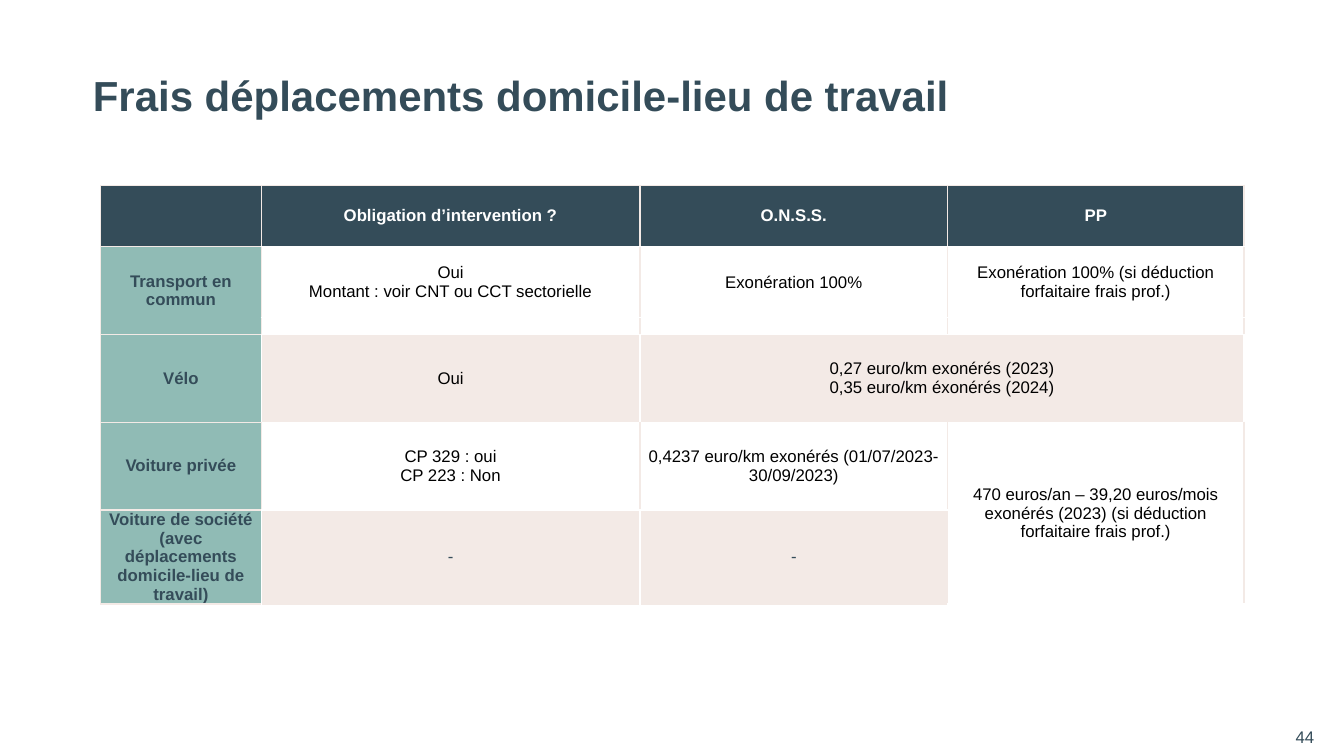
from dataclasses import dataclass

from lxml.etree import SubElement
from pptx import Presentation
from pptx.dml.color import RGBColor
from pptx.enum.text import MSO_ANCHOR, MSO_AUTO_SIZE, PP_ALIGN
from pptx.oxml.ns import qn
from pptx.util import Cm, Pt


@dataclass(frozen=True)
class Theme:
    font: str = "Arial"
    navy: str = "344C59"
    teal: str = "90BBB5"
    tint: str = "F3EAE6"
    white: str = "FFFFFF"
    black: str = "000000"
    title_size: int = 30
    text_size: int = 12
    spacer_size: int = 8
    border_width: int = 1


THEME = Theme()

COLUMN_WIDTHS = (4.04, 9.55, 7.75, 7.47)
ROW_HEIGHTS = (1.55, 1.78, 0.43, 2.21, 2.21, 2.36)
ROWS = (
    ("", "Obligation d’intervention ?", "O.N.S.S.", "PP"),
    ("Transport en commun", "Oui\nMontant : voir CNT ou CCT sectorielle",
     "Exonération 100%", "Exonération 100% (si déduction forfaitaire frais prof.)"),
    ("", "", "", ""),
    ("Vélo", "Oui", "0,27 euro/km exonérés (2023)\n0,35 euro/km éxonérés (2024)", ""),
    ("Voiture privée", "CP 329 : oui\nCP 223 : Non",
     "0,4237 euro/km exonérés (01/07/2023-30/09/2023)",
     "470 euros/an – 39,20 euros/mois exonérés (2023) (si déduction forfaitaire frais prof.)"),
    ("Voiture de société (avec déplacements domicile-lieu de travail)", "-", "-", ""),
)
MERGES = (((1, 0), (2, 0)), ((3, 2), (3, 3)), ((4, 3), (5, 3)))
TINTED_ROWS = (3, 5)
LAST_ROW = len(ROWS) - 1


def write_text(frame, text, size=THEME.text_size, color=THEME.black, bold=False,
               align=PP_ALIGN.LEFT, line_spacing=None):
    """Fill a text frame, one paragraph for each line of text."""
    frame.text = text
    for paragraph in frame.paragraphs:
        paragraph.alignment = align
        paragraph.line_spacing = line_spacing
        for run in paragraph.runs:
            run.font.name = THEME.font
            run.font.size = Pt(size)
            run.font.bold = bold
            run.font.color.rgb = RGBColor.from_string(color)


def prepare_frame(frame):
    """Wrap and centre vertically, without margins or automatic sizing."""
    frame.word_wrap = True
    frame.auto_size = MSO_AUTO_SIZE.NONE
    frame.vertical_anchor = MSO_ANCHOR.MIDDLE
    frame.margin_left = frame.margin_right = frame.margin_top = frame.margin_bottom = 0


def add_title(slide, text):
    title = slide.shapes.title
    title.left, title.top, title.width, title.height = Cm(2.34), Cm(1.02), Cm(23.75), Cm(2.92)
    prepare_frame(title.text_frame)
    write_text(title.text_frame, text, size=THEME.title_size, color=THEME.navy,
               bold=True, line_spacing=0.9)


def add_page_number(slide, text):
    box = slide.shapes.add_textbox(Cm(31.04), Cm(18.31), Cm(2.08), Cm(0.51))
    prepare_frame(box.text_frame)
    write_text(box.text_frame, text, color=THEME.navy, align=PP_ALIGN.RIGHT)


def set_borders(cell, **colors):
    """Draw the borders; the keys L, R, T and B name the sides."""
    properties = cell._tc.get_or_add_tcPr()
    for side in "LRTB":
        line = SubElement(properties, qn(f"a:ln{side}"), w=str(Pt(THEME.border_width)))
        SubElement(SubElement(line, qn("a:solidFill")), qn("a:srgbClr"), val=colors[side])


def cell_style(row, column):
    """Return the fill, text colour and weight of a cell."""
    if row == 0:
        return THEME.navy, THEME.white, True
    if column == 0:
        return THEME.teal, THEME.navy, True
    fill = THEME.tint if row in TINTED_ROWS and (row, column) != (LAST_ROW, 3) else THEME.white
    return fill, THEME.navy if row == LAST_ROW else THEME.black, False


def format_cell(cell, row, column):
    fill, color, bold = cell_style(row, column)
    vertical = THEME.white if fill == THEME.tint else THEME.tint
    set_borders(cell, L=vertical, R=vertical,
                T=THEME.tint if row == 0 or column == 0 else THEME.white,
                B=THEME.tint if row == LAST_ROW or column == 0 else THEME.white)
    cell.fill.solid()
    cell.fill.fore_color.rgb = RGBColor.from_string(fill)
    cell.vertical_anchor = MSO_ANCHOR.MIDDLE
    cell.margin_left = cell.margin_right = Cm(0.18)
    cell.margin_top = cell.margin_bottom = 0
    text = ROWS[row][column]
    if text:
        write_text(cell.text_frame, text, color=color, bold=bold, align=PP_ALIGN.CENTER)
    else:
        end = SubElement(cell.text_frame.paragraphs[0]._p, qn("a:endParaRPr"))
        end.set("sz", str(THEME.spacer_size * 100))


def add_expense_table(slide):
    table = slide.shapes.add_table(
        len(ROWS), len(COLUMN_WIDTHS), Cm(2.54), Cm(4.67),
        Cm(sum(COLUMN_WIDTHS)), Cm(sum(ROW_HEIGHTS))).table
    table.first_row = table.horz_banding = False
    for column, width in zip(table.columns, COLUMN_WIDTHS):
        column.width = Cm(width)
    for row, height in zip(table.rows, ROW_HEIGHTS):
        row.height = Cm(height)
    for row in range(len(ROWS)):
        for column in range(len(COLUMN_WIDTHS)):
            format_cell(table.cell(row, column), row, column)
    for first, last in MERGES:
        table.cell(*first).merge(table.cell(*last))


def main():
    presentation = Presentation()
    presentation.slide_width, presentation.slide_height = Cm(33.87), Cm(19.05)
    slide = presentation.slides.add_slide(presentation.slide_layouts[5])
    add_page_number(slide, "44")
    add_title(slide, "Frais déplacements domicile-lieu de travail")
    add_expense_table(slide)
    presentation.save("out.pptx")


if __name__ == "__main__":
    main()
